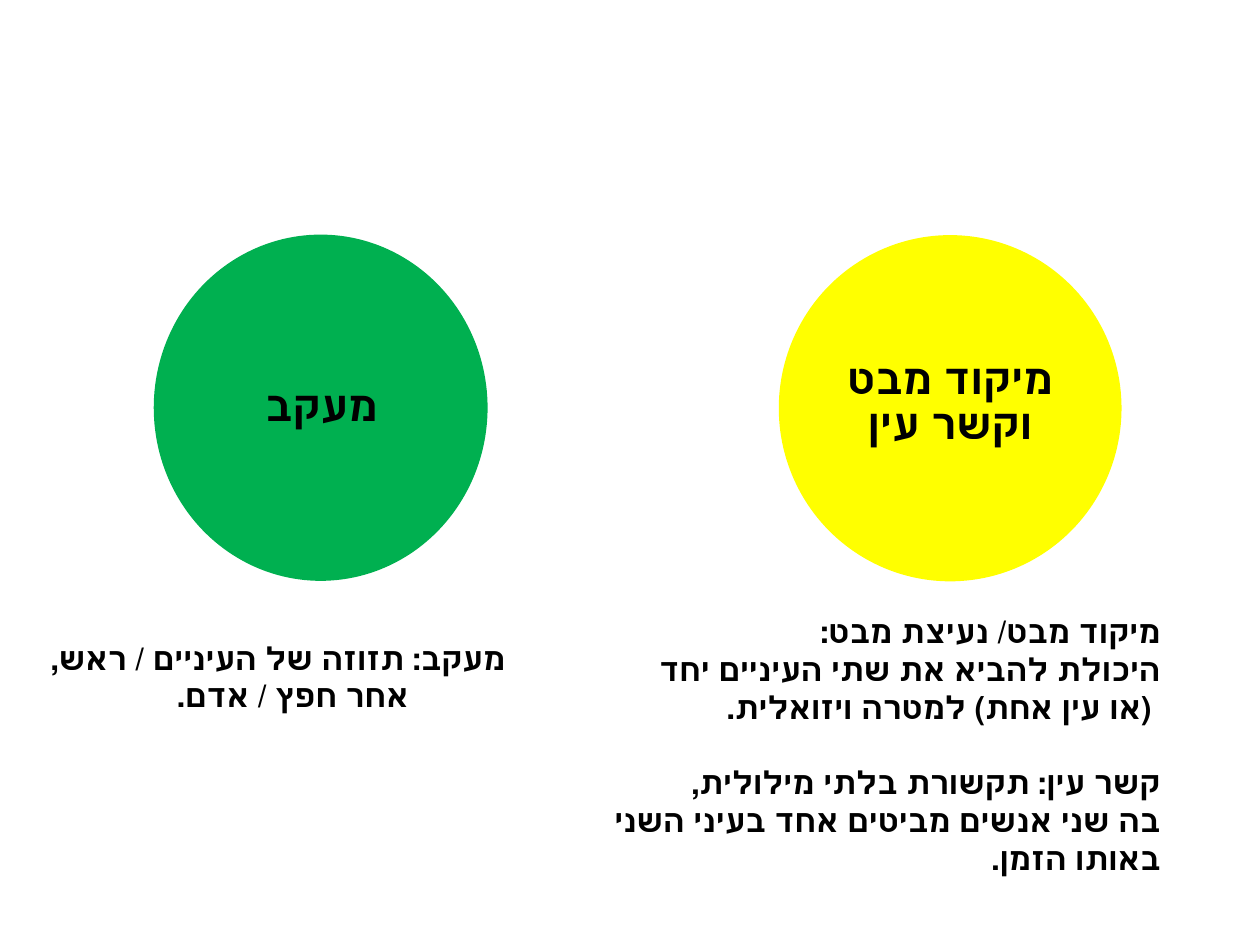
from pptx import Presentation
from pptx.dml.color import RGBColor
from pptx.enum.shapes import MSO_SHAPE as Shape
from pptx.enum.text import MSO_ANCHOR as Anchor, PP_ALIGN as Align
from pptx.util import Cm, Pt

FONT = "Calibri"
BLACK, YELLOW, GREEN = "000000", "FFFF00", "00B050"


def colour(hex_code):
    return RGBColor.from_string(hex_code)


def add_hebrew_run(paragraph, words, size):
    run = paragraph.add_run()
    run.text = words
    font = run.font
    font.name, font.size, font.bold = FONT, Pt(size), True
    font.color.rgb = colour(BLACK)


def set_rtl(paragraph, align, indent=0):
    paragraph.alignment = align
    properties = paragraph._p.get_or_add_pPr()
    properties.set("rtl", "1")
    if indent:
        for side in ("marL", "marR"):
            properties.set(side, str(Cm(indent)))


def add_skill_circle(slide, title, fill, circle_box, title_box):
    group = slide.shapes.add_group_shape()
    circle = group.shapes.add_shape(Shape.OVAL, *map(Cm, circle_box))
    circle.shadow.inherit = False
    circle.fill.solid()
    circle.fill.fore_color.rgb = colour(fill)
    circle.line.fill.background()

    frame = group.shapes.add_textbox(*map(Cm, title_box)).text_frame
    frame.word_wrap = True
    frame.vertical_anchor = Anchor.MIDDLE
    frame.margin_left = frame.margin_right = Cm(0.18)
    frame.margin_top = frame.margin_bottom = Cm(0.06)
    heading = frame.paragraphs[0]
    set_rtl(heading, Align.CENTER)
    heading.line_spacing = 0.9
    add_hebrew_run(heading, title, 24)


def add_definition(slide, box, lines):
    """Each line is its words, its indent in cm and its space before in points."""
    frame = slide.shapes.add_textbox(*map(Cm, box)).text_frame
    frame.word_wrap = True
    for number, (words, indent, gap) in enumerate(lines):
        line = frame.add_paragraph() if number else frame.paragraphs[0]
        set_rtl(line, Align.RIGHT, indent)
        if gap:
            line.space_before = Pt(gap)
        add_hebrew_run(line, words, 18)


def main():
    prs = Presentation()
    prs.slide_width, prs.slide_height = Cm(25.4), Cm(19.05)
    slide = prs.slides.add_slide(prs.slide_layouts[6])

    # Skill circles
    add_skill_circle(slide, "מיקוד מבט וקשר עין", YELLOW,
                     (15.7, 4.74, 6.91, 6.98), (16.71, 5.67, 4.88, 4.93))
    add_skill_circle(slide, "מעקב", GREEN,
                     (3.1, 4.73, 6.73, 6.98), (4.09, 5.74, 4.78, 4.95))

    # Definitions below the circles
    add_definition(slide, (10.95, 12.22, 12.7, 5.64), [
        ("מיקוד מבט/ נעיצת מבט:", 0, 0),
        ("היכולת להביא את שתי העיניים יחד", 0, 0),
        ("(או עין אחת) למטרה ויזואלית.", 0.18, 0),
        ("קשר עין: תקשורת בלתי מילולית,", 0, 21.5),
        ("בה שני אנשים מביטים אחד בעיני השני", 0, 0),
        ("באותו הזמן.", 0, 0),
    ])
    add_definition(slide, (-2.26, 12.75, 12.7, 2.57), [
        ("מעקב: תזוזה של העיניים / ראש,", 0, 0),
        ("אחר חפץ / אדם.", 1.95, 0),
    ])

    prs.save("out.pptx")


if __name__ == "__main__":
    main()
